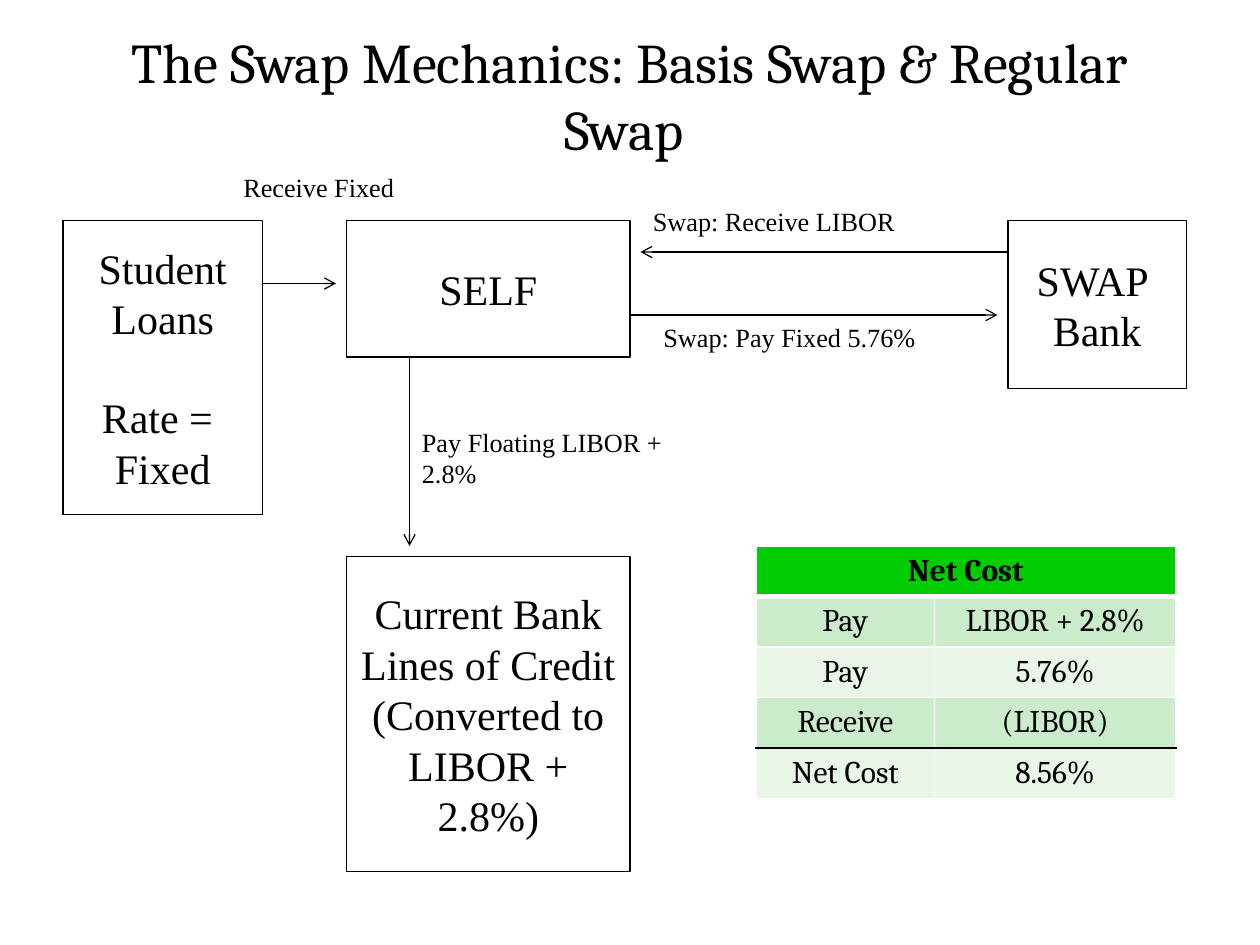
from dataclasses import dataclass

from lxml.etree import SubElement
from pptx import Presentation
from pptx.dml.color import RGBColor
from pptx.enum.shapes import MSO_CONNECTOR, MSO_SHAPE
from pptx.enum.text import MSO_ANCHOR, PP_ALIGN
from pptx.oxml.ns import qn
from pptx.util import Inches, Pt


@dataclass(frozen=True)
class Theme:
    ink: str = "000000"
    paper: str = "FFFFFF"
    header: str = "00CC00"
    bands: tuple = ("CBECCB", "E7F6E7")
    heading_font: str = "Cambria"
    body_font: str = "Times New Roman"
    title_size: int = 32
    box_size: int = 24
    label_size: int = 15
    table_size: int = 18
    line_width: float = 0.75


THEME = Theme()
SLIDE_COLUMNS, SLIDE_ROWS = 120, 90


def grid(*units):
    """Turn grid units, twelve to the inch, into lengths."""
    return [Inches(unit / 12) for unit in units]


def write(text_frame, text, size, font, align=PP_ALIGN.CENTER, bold=False):
    text_frame.text = text
    for paragraph in text_frame.paragraphs:
        paragraph.alignment = align
        for run in paragraph.runs:
            run.font.size = Pt(size)
            run.font.name = font
            run.font.bold = bold
            run.font.color.rgb = RGBColor.from_string(THEME.ink)


def add_title(slide, text):
    shape = slide.shapes.add_textbox(*grid(9, 3, 102, 12))
    frame = shape.text_frame
    frame.word_wrap = True
    frame.vertical_anchor = MSO_ANCHOR.MIDDLE
    write(frame, text, THEME.title_size, THEME.heading_font)


def add_box(slide, area, text, wrap=False):
    shape = slide.shapes.add_shape(MSO_SHAPE.RECTANGLE, *grid(*area))
    shape.shadow.inherit = False
    shape.fill.background()
    shape.line.color.rgb = RGBColor.from_string(THEME.ink)
    shape.line.width = Pt(THEME.line_width)
    frame = shape.text_frame
    frame.word_wrap = wrap
    frame.vertical_anchor = MSO_ANCHOR.MIDDLE
    write(frame, text, THEME.box_size, THEME.body_font)
    return shape


def add_label(slide, area, text):
    frame = slide.shapes.add_textbox(*grid(*area)).text_frame
    frame.word_wrap = True
    write(frame, text, THEME.label_size, THEME.body_font, PP_ALIGN.LEFT)


def add_arrow(slide, start, end):
    arrow = slide.shapes.add_connector(
        MSO_CONNECTOR.STRAIGHT, *grid(*start, *end))
    arrow.line.color.rgb = RGBColor.from_string(THEME.ink)
    arrow.line.width = Pt(THEME.line_width)
    SubElement(arrow.line._get_or_add_ln(), qn("a:tailEnd"), type="arrow")
    SubElement(arrow._element.spPr, qn("a:effectLst"))


def set_borders(cell, **changes):
    """Draw thin white borders, except for sides given as (color, width)."""
    properties = cell._tc.get_or_add_tcPr()
    for index, side in enumerate(("L", "R", "T", "B")):
        color, width = changes.get(side, (THEME.paper, 1))
        border = properties.makeelement(qn(f"a:ln{side}"), w=str(Pt(width)))
        fill = SubElement(border, qn("a:solidFill"))
        SubElement(fill, qn("a:srgbClr"), val=color)
        properties.insert(index, border)


def fill_cell(cell, text, color, bold=False):
    cell.fill.solid()
    cell.fill.fore_color.rgb = RGBColor.from_string(color)
    cell.vertical_anchor = MSO_ANCHOR.MIDDLE
    write(cell.text_frame, text, THEME.table_size, THEME.heading_font,
          bold=bold)


def add_cost_table(slide, corner, widths, row_height, heading, rows):
    count = len(rows) + 1
    area = (*corner, sum(widths), row_height * count)
    table = slide.shapes.add_table(count, len(widths), *grid(*area)).table
    for column, width in zip(table.columns, grid(*widths)):
        column.width = width

    # Heading across all columns
    table.cell(0, 0).merge(table.cell(0, len(widths) - 1))
    fill_cell(table.cell(0, 0), heading, THEME.header, bold=True)
    for column in range(len(widths)):
        set_borders(table.cell(0, column), B=(THEME.paper, 3))

    # Banded rows, with a rule above the total
    rule = (THEME.ink, 1)
    edges = {1: {"T": (THEME.paper, 3)},
             count - 2: {"B": rule}, count - 1: {"T": rule}}
    for number, row in enumerate(rows, start=1):
        for column, text in enumerate(row):
            cell = table.cell(number, column)
            fill_cell(cell, text, THEME.bands[(number - 1) % 2])
            set_borders(cell, **edges.get(number, {}))


def main():
    presentation = Presentation()
    presentation.slide_width, presentation.slide_height = grid(
        SLIDE_COLUMNS, SLIDE_ROWS)
    slide = presentation.slides.add_slide(presentation.slide_layouts[6])
    add_title(slide, "The Swap Mechanics: Basis Swap & Regular Swap ")

    # Parties
    add_box(slide, (33, 21, 27, 13), "SELF")
    add_box(slide, (33, 53, 27, 30),
            "Current Bank Lines of Credit\n(Converted to LIBOR + 2.8%)",
            wrap=True)
    loans = add_box(slide, (6, 21, 19, 28), "Student\nLoans\nRate = \nFixed")
    loans.text_frame.paragraphs[2].space_before = Pt(1.15 * THEME.box_size)
    add_box(slide, (96, 21, 17, 16), "SWAP \nBank")

    # Payment flows
    for start, end in (((25, 27), (32, 27)), ((39, 34), (39, 52)),
                       ((96, 24), (61, 24)), ((60, 30), (95, 30))):
        add_arrow(slide, start, end)
    for area, text in (((22, 15.75, 18, 4.2), "Receive Fixed"),
                       ((39, 40, 27, 7.3), "Pay Floating LIBOR + 2.8%"),
                       ((62, 30, 33, 4.2), "Swap: Pay Fixed 5.76%"),
                       ((61, 19, 36, 4.2), "Swap: Receive LIBOR")):
        add_label(slide, area, text)

    # Resulting cost
    add_cost_table(slide, (72, 52), (17, 23), 4.8, "Net Cost",
                   (("Pay", "LIBOR + 2.8%"), ("Pay", "5.76%"),
                    ("Receive", "(LIBOR)"), ("Net Cost", "8.56%")))

    presentation.save("out.pptx")


if __name__ == "__main__":
    main()
